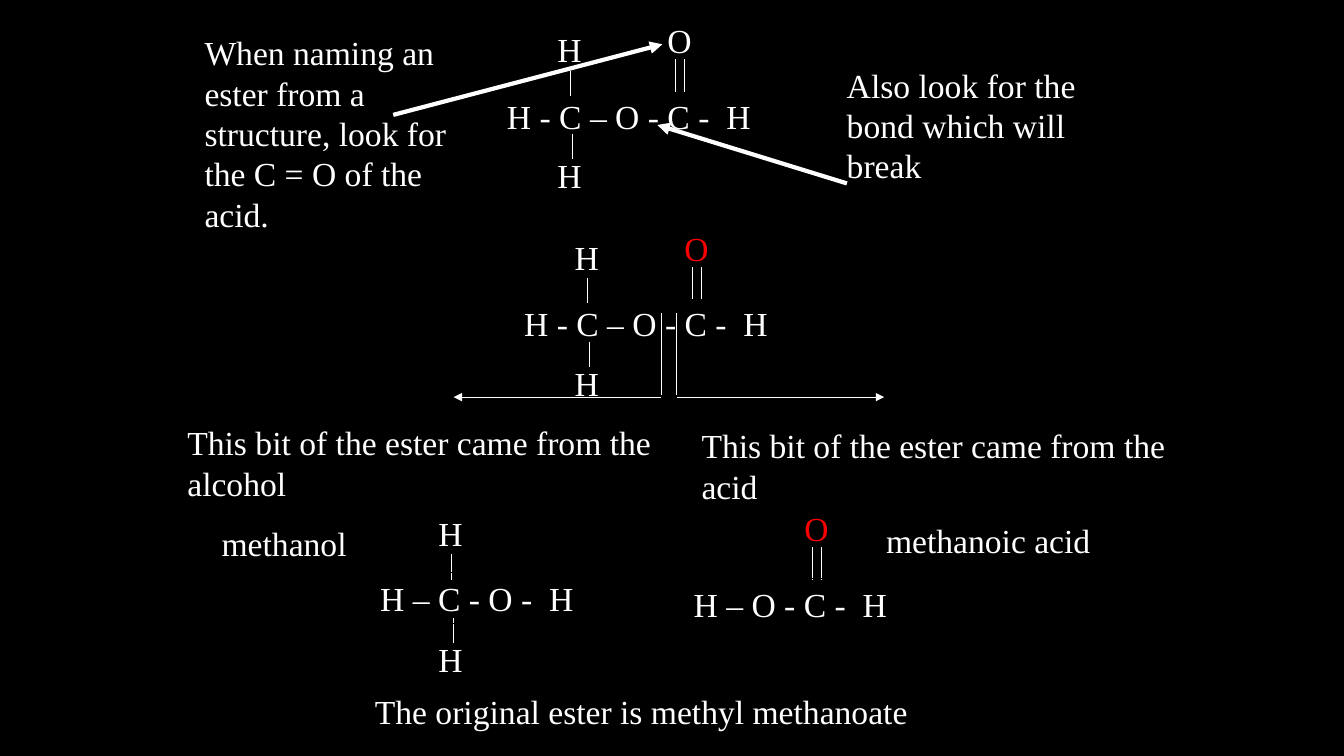
from dataclasses import dataclass

import pptx
import pptx.dml.color
import pptx.enum.dml
import pptx.enum.shapes
import pptx.enum.text
import pptx.oxml
import pptx.oxml.ns
import pptx.util
from lxml import etree

RGB = pptx.dml.color.RGBColor
Inches = pptx.util.Inches


@dataclass(frozen=True)
class Theme:
    font: str = "Times New Roman"
    size: int = 24
    ground: RGB = RGB(0, 0, 0)
    ink: RGB = RGB(255, 255, 255)
    highlight: RGB = RGB(255, 0, 0)
    thin: float = 0.75
    thick: float = 3


THEME = Theme()
ROW = 0.51           # height of one line of formula text
ATOM_WIDTH = 0.5
CHAIN_WIDTH = 2.72
BOND = 0.25
CARBONYL_BOND = 0.32


def write(frame, wording, color):
    frame.word_wrap = True
    frame.vertical_anchor = pptx.enum.text.MSO_ANCHOR.TOP
    paragraph = frame.paragraphs[0]
    paragraph.alignment = pptx.enum.text.PP_ALIGN.LEFT
    run = paragraph.add_run()
    run.text = wording
    run.font.name = THEME.font
    run.font.size = pptx.util.Pt(THEME.size)
    run.font.color.rgb = color
    return paragraph


def add_caption(shapes, left, top, width, height, wording):
    caption = shapes.add_textbox(*map(Inches, (left, top, width, height)))
    write(caption.text_frame, wording, THEME.ink)


def add_formula(shapes, left, top, width, wording, color=THEME.ink, indent=0):
    """Place atoms in an unfilled box outlined in the ground colour."""
    formula = shapes.add_shape(pptx.enum.shapes.MSO_SHAPE.RECTANGLE,
                               *map(Inches, (left, top, width, ROW)))
    formula.shadow.inherit = False
    formula.fill.background()
    formula.line.color.rgb = THEME.ground
    formula.line.width = pptx.util.Pt(THEME.thin)
    write(formula.text_frame, wording, color)
    formula.text_frame.margin_left = Inches(0.1 + indent)


def add_line(shapes, start, end, weight=THEME.thin, arrow=False):
    """Draw a line; an arrow points at its end."""
    line = shapes.add_connector(pptx.enum.shapes.MSO_CONNECTOR.STRAIGHT,
                                *map(Inches, (*start, *end)))
    line.line.color.rgb = THEME.ink
    line.line.width = pptx.util.Pt(weight)
    if arrow:
        outline = line.line._get_or_add_ln()
        etree.SubElement(outline, pptx.oxml.ns.qn("a:tailEnd"), type="triangle")
    etree.SubElement(line._element.spPr, pptx.oxml.ns.qn("a:effectLst"))


def add_bond(shapes, x, top, length):
    add_line(shapes, (x, top), (x, top + length))


def add_methyl_hydrogens(shapes, left, top):
    """Place the hydrogens above and below a carbon, with their bonds."""
    for drop in (0, 1.25):
        add_formula(shapes, left, top + drop, ATOM_WIDTH, "H")
    add_bond(shapes, left + 0.25, top + 1.09, BOND)
    add_bond(shapes, left + 0.23, top + 0.46, BOND)


def add_carbonyl(shapes, left, top, color):
    """Place the double-bonded oxygen above a carbon."""
    add_formula(shapes, left, top, 0.47, "O", color)
    for offset in (0.18, 0.27):
        add_bond(shapes, left + offset, top + 0.44, CARBONYL_BOND)


def add_ester(slide, left, top, oxygen_color):
    parts = slide.shapes.add_group_shape().shapes
    add_formula(parts, left, top + 0.75, CHAIN_WIDTH, "H - C – O - C -  H")
    add_methyl_hydrogens(parts, left + 0.5, top + 0.09)
    add_carbonyl(parts, left + 1.59, top, oxygen_color)


def add_origin(slide, cut, reach, caption_left, caption_top, source):
    """Draw one side of the broken bond and say where that part came from."""
    parts = slide.shapes.add_group_shape().shapes
    add_bond(parts, cut, 3.11, 0.81)
    add_line(parts, (cut, 3.94), (cut + reach, 3.94), arrow=True)
    add_caption(parts, caption_left, caption_top, 4.91, 0.91,
                f"This bit of the ester came from the {source}")


def add_methanol(slide, left, top):
    parts = slide.shapes.add_group_shape().shapes
    add_methyl_hydrogens(parts, left + 2.15, top)
    add_formula(parts, left + 1.07, top + 0.64, CHAIN_WIDTH,
                "H – C - O -  H", indent=0.5)
    add_caption(parts, left, top + 0.1, 1.87, 0.5, "methanol")


def add_methanoic_acid(slide, left, top):
    parts = slide.shapes.add_group_shape().shapes
    add_carbonyl(parts, left + 1.6, top, THEME.highlight)
    add_formula(parts, left, top + 0.75, CHAIN_WIDTH,
                "H – O - C -  H", indent=0.5)
    add_caption(parts, left + 2.41, top + 0.12, 2.44, 0.5, "methanoic acid")


def add_hints(slide):
    shapes = slide.shapes
    add_caption(shapes, 1.93, 0.27, 2.68, 2.12,
                "When naming an ester from a structure, "
                "look for the C = O of the acid.")
    add_line(shapes, (3.9, 1.14), (6.57, 0.44), THEME.thick, arrow=True)
    add_caption(shapes, 8.3, 0.59, 2.87, 1.31,
                "Also look for the bond which will break")
    add_line(shapes, (8.4, 1.82), (6.52, 1.24), THEME.thick, arrow=True)


def main():
    deck = pptx.Presentation()
    deck.slide_width, deck.slide_height = Inches(13.33), Inches(7.5)
    slide = deck.slides.add_slide(deck.slide_layouts[6])
    slide.background.fill.solid()
    slide.background.fill.fore_color.rgb = THEME.ground

    add_ester(slide, 4.93, 0.15, THEME.ink)
    add_hints(slide)
    add_ester(slide, 5.1, 2.21, THEME.highlight)
    add_origin(slide, 6.56, -2.06, 1.76, 4.14, "alcohol")
    add_origin(slide, 6.71, 2.06, 6.86, 4.17, "acid")
    add_methanol(slide, 2.1, 5.04)
    add_methanoic_acid(slide, 6.28, 4.99)
    add_caption(slide.shapes, 3.62, 6.81, 5.87, 0.5,
                "The original ester is methyl methanoate")
    deck.save("out.pptx")


if __name__ == "__main__":
    main()
